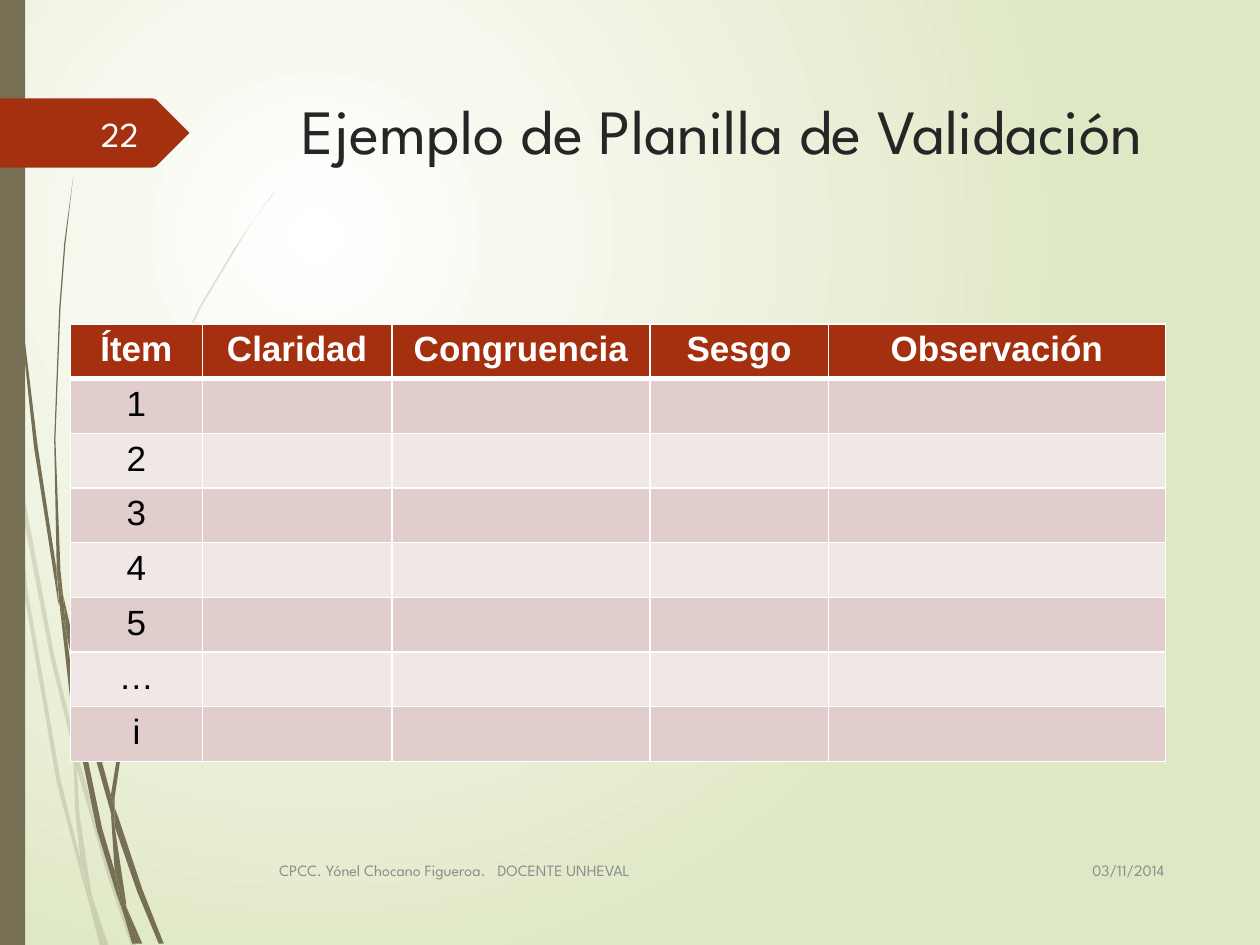
from lxml.etree import SubElement
from pptx import Presentation
from pptx.dml.color import RGBColor
from pptx.enum.shapes import MSO_SHAPE
from pptx.enum.text import MSO_ANCHOR, PP_ALIGN
from pptx.oxml.ns import qn
from pptx.util import Cm, Pt

COLORS = {
    "cream": "FFFFFF", "sage": "DFE8C4", "olive": "766F54", "rust": "A53010",
    "title": "262626", "footer": "8C8C8C", "number": "FEFFFF", "white": "FFFFFF",
    "black": "000000", "band": "E1CDCC", "pale": "F0E8E7",
}
FONT = "League Spartan"
HUNDREDTH_INCH = Cm(2.54) / 100

FAINT_WISPS = [
    [(8, 350), (6, 322), (0, 282), (0, 299), (7, 344)],
    [(40, 522), (59, 599), (59, 586), (43, 520), (10, 345), (12, 376)],
    [(64, 607), (61, 596), (61, 610), (85, 694), (104, 750), (108, 750), (88, 692)],
    [(83, 750), (86, 750), (73, 711)],
    [(64, 683), (48, 619), (22, 469), (12, 376), (8, 350), (19, 470), (45, 621),
     (64, 693), (70, 714), (69, 707)],
    [(58, 599), (60, 646), (64, 683), (67, 692), (73, 711), (72, 706), (63, 646),
     (61, 610), (61, 608)],
    [(61, 584), (76, 462), (111, 349), (159, 245), (187, 198), (201, 175), (217, 154),
     (217, 153), (201, 175), (186, 197), (158, 244), (110, 348), (75, 461), (59, 584),
     (59, 586), (61, 596)],
    [(70, 714), (79, 750), (82, 750)],
    [(61, 608), (61, 610), (61, 596), (59, 586), (58, 599)],
    [(67, 692), (65, 683), (69, 707), (70, 714), (82, 750), (83, 750), (73, 711)],
]
DARK_WISPS = [
    [(5, 110), (14, 233), (27, 355), (46, 477), (47, 481), (45, 457), (45, 453),
     (30, 355), (15, 232), (6, 109), (4, 48), (3, 0), (2, 0), (3, 48)],
    [(73, 592), (88, 645), (88, 633), (88, 631), (77, 590), (50, 472), (53, 505)],
    [(94, 649), (91, 641), (91, 656), (109, 708), (126, 749), (130, 749), (113, 706)],
    [(91, 691), (81, 657), (60, 556), (53, 505), (47, 477), (56, 557), (77, 659),
     (92, 708), (97, 722), (96, 717)],
    [(50, 472), (48, 453), (44, 349), (48, 245), (52, 193), (58, 141), (51, 193),
     (47, 245), (43, 349), (45, 449), (49, 472)],
    [(110, 749), (113, 749), (100, 719)],
    [(47, 477), (53, 505), (50, 472), (49, 472), (45, 449), (45, 453)],
    [(91, 633), (103, 552), (131, 476), (169, 406), (191, 374), (203, 359), (216, 344),
     (215, 344), (203, 358), (191, 373), (168, 405), (129, 474), (101, 551), (88, 631),
     (91, 641)],
    [(97, 722), (105, 749), (108, 749)],
    [(88, 645), (91, 691), (96, 706), (100, 719), (100, 716), (91, 656), (90, 651)],
    [(88, 645), (90, 651), (91, 656), (91, 641), (88, 631), (88, 633)],
    [(96, 706), (91, 691), (96, 717), (97, 722), (108, 749), (110, 749), (100, 719)],
]
NUMBER_TAG = [(149, 107), (124, 132), (121, 133), (0, 133), (0, 78), (121, 78),
              (124, 79), (149, 104), (150, 105), (150, 106)]

HEADERS = ["Ítem", "Claridad", "Congruencia", "Sesgo", "Observación"]
ITEMS = ["1", "2", "3", "4", "5", "…", "i"]
COLUMN_WIDTHS = [2.66, 3.82, 5.2, 3.6, 6.79]
ROW_HEIGHT = 1.1


class SlideBuilder:
    """Holds the style and the current slide, and draws each kind of element."""

    def __init__(self, page):
        self.page = page

    def background(self, inner, outer):
        fill = self.page.background.fill
        fill.gradient()
        for stop, color in zip(fill.gradient_stops, (inner, outer)):
            stop.color.rgb = RGBColor.from_string(COLORS[color])
        gradient = self.page.element.find(".//" + qn("a:gradFill"))
        gradient.remove(gradient.find(qn("a:lin")))
        circle = SubElement(gradient, qn("a:path"), path="circle")
        SubElement(circle, qn("a:fillToRect"), l="50000", t="50000", r="100000", b="100000")

    def paint(self, shape, color, alpha=None):
        shape.shadow.inherit = False
        shape.fill.solid()
        shape.fill.fore_color.rgb = RGBColor.from_string(COLORS[color])
        shape.line.fill.background()
        if alpha:
            tint = shape.element.spPr.find(".//" + qn("a:srgbClr"))
            SubElement(tint, qn("a:alpha"), val=str(alpha * 1000))

    def outline(self, shapes, points, color, alpha=None):
        builder = shapes.build_freeform(*points[0], scale=HUNDREDTH_INCH)
        builder.add_line_segments(points[1:], close=True)
        self.paint(builder.convert_to_shape(), color, alpha)

    def wisps(self, outlines, alpha=None):
        group = self.page.shapes.add_group_shape()
        for points in outlines:
            self.outline(group.shapes, points, "olive", alpha)

    def bar(self, left, top, width, height, color):
        area = (Cm(value) for value in (left, top, width, height))
        self.paint(self.page.shapes.add_shape(MSO_SHAPE.RECTANGLE, *area), color)

    def style(self, para, size, color, align, name=FONT, bold=False):
        para.alignment = align
        para.font.size = Pt(size)
        para.font.name = name
        para.font.bold = bold
        para.font.color.rgb = RGBColor.from_string(COLORS[color])

    def text(self, area, words, size, color, align, anchor=MSO_ANCHOR.MIDDLE, tab=None):
        box = self.page.shapes.add_textbox(*(Cm(value) for value in area))
        frame = box.text_frame
        frame.word_wrap = True
        frame.vertical_anchor = anchor
        para = frame.paragraphs[0]
        para.text = words
        if tab:
            stops = SubElement(para._p.get_or_add_pPr(), qn("a:tabLst"))
            SubElement(stops, qn("a:tab"), pos=str(Cm(tab)), algn="l")
        self.style(para, size, color, align)

    def cell(self, cell, words, fill, ink, bold, top, bottom):
        properties = cell._tc.get_or_add_tcPr()
        for side, width in (("lnL", 1), ("lnR", 1), ("lnT", top), ("lnB", bottom)):
            edge = SubElement(properties, qn("a:" + side), w=str(Pt(width)))
            paint = SubElement(edge, qn("a:solidFill"))
            SubElement(paint, qn("a:srgbClr"), val=COLORS["white"])
        cell.fill.solid()
        cell.fill.fore_color.rgb = RGBColor.from_string(COLORS[fill])
        para = cell.text_frame.paragraphs[0]
        para.text = words
        self.style(para, 20, ink, PP_ALIGN.CENTER, "Arial", bold)

    def table(self, left, top, headers, items):
        rows = [headers] + [[item] + [""] * (len(headers) - 1) for item in items]
        width, height = sum(COLUMN_WIDTHS), ROW_HEIGHT * len(rows)
        table = self.page.shapes.add_table(
            len(rows), len(headers), Cm(left), Cm(top), Cm(width), Cm(height)).table
        for column, size in zip(table.columns, COLUMN_WIDTHS):
            column.width = Cm(size)
        for index, row in enumerate(rows):
            table.rows[index].height = Cm(ROW_HEIGHT)
            head = index == 0
            fill = "rust" if head else ("pale", "band")[index % 2]
            for place, words in enumerate(row):
                self.cell(table.cell(index, place), words, fill,
                          "white" if head else "black", head,
                          3 if index == 1 else 1, 3 if head else 1)


def main():
    deck = Presentation()
    deck.slide_width, deck.slide_height = Cm(25.4), Cm(19.05)
    slide = SlideBuilder(deck.slides.add_slide(deck.slide_layouts[6]))
    slide.background("cream", "sage")
    slide.wisps(FAINT_WISPS, alpha=20)
    slide.wisps(DARK_WISPS)
    slide.bar(0, 0, 0.51, 19.05, "olive")
    slide.outline(slide.page.shapes, NUMBER_TAG, "rust")
    slide.text((5.41, 1.73, 18.31, 3.56), "Ejemplo de Planilla de Validación",
               36, "title", PP_ALIGN.CENTER, MSO_ANCHOR.TOP)
    slide.table(1.42, 6.53, HEADERS, ITEMS)
    slide.text((21.59, 17.04, 2.13, 1.02), "03/11/2014", 9, "footer", PP_ALIGN.RIGHT)
    slide.text((5.38, 17.04, 15.88, 1.02), "CPCC. Yónel Chocano Figueroa.\tDOCENTE UNHEVAL",
               9, "footer", PP_ALIGN.LEFT, tab=4.4)
    slide.text((1.42, 2.18, 1.63, 1.02), "22", 20, "number", PP_ALIGN.RIGHT)
    deck.save("out.pptx")


if __name__ == "__main__":
    main()
